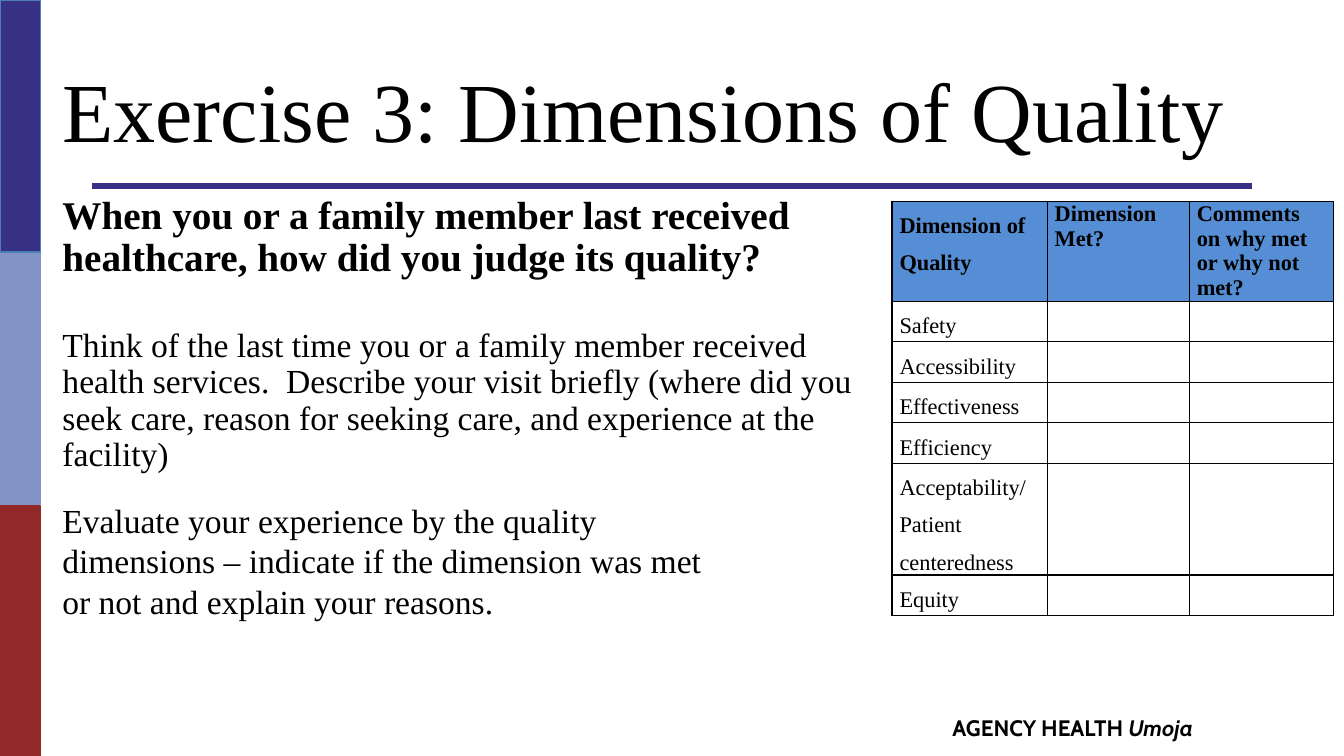
import pptx
import pptx.dml.color
import pptx.enum.shapes
import pptx.enum.text
import pptx.oxml
import pptx.util
from pptx.dml.color import RGBColor
from pptx.util import Cm

BLACK = RGBColor(0, 0, 0)
INDIGO = RGBColor(0x37, 0x31, 0x85)
INDIGO_EDGE = RGBColor(0x4E, 0x7F, 0xB4)
PERIWINKLE = RGBColor(0x83, 0x93, 0xC5)
BRICK = RGBColor(0x93, 0x28, 0x28)
RULE = RGBColor(0x38, 0x30, 0x87)
HEADER_BLUE = RGBColor(0x55, 0x8E, 0xD5)

QUESTION = ("When you or a family member last received healthcare, "
            "how did you judge its quality?")
VISIT = ("Think of the last time you or a family member received health services.  "
         "Describe your visit briefly (where did you seek care, reason for seeking "
         "care, and experience at the facility)")
EVALUATE = ("Evaluate your experience by the quality dimensions – indicate if the "
            "dimension was met or not and explain your reasons.")
HEADERS = ["Dimension of Quality", "Dimension Met?", "Comments on why met or why not met?"]
DIMENSIONS = ["Safety", "Accessibility", "Effectiveness", "Efficiency",
              "Acceptability/Patient centeredness", "Equity"]


def set_attributes(obj, values):
    for name, value in values.items():
        setattr(obj, name, value)


def add_xml(parent, tag, inner="", attributes=""):
    """Append a DrawingML element to parent."""
    ns = 'xmlns:a="http://schemas.openxmlformats.org/drawingml/2006/main"'
    parent.append(pptx.oxml.parse_xml(f"<a:{tag} {ns} {attributes}>{inner}</a:{tag}>"))


class QualitySlide:
    """Holds the presentation, its text style and the current slide."""

    font = "Times New Roman"

    def __init__(self):
        self.prs = pptx.Presentation()
        set_attributes(self.prs, {"slide_width": Cm(33.87), "slide_height": Cm(19.05)})
        self.s = self.prs.slides.add_slide(self.prs.slide_layouts[1])

    def run(self, p, text, size, bold=False, italic=False, name=None):
        r = p.add_run()
        r.text = text
        set_attributes(r.font, {"name": name or self.font, "size": pptx.util.Pt(size),
                                "bold": bold, "italic": italic})
        r.font.color.rgb = BLACK

    def paragraph(self, p, spacing=1.0, before=0):
        p_pr = p._p.get_or_add_pPr()
        p_pr.set("marL", "0")
        p_pr.set("indent", "0")
        add_xml(p_pr, "buNone")
        set_attributes(p, {"line_spacing": spacing, "space_before": pptx.util.Pt(before),
                           "alignment": pptx.enum.text.PP_ALIGN.LEFT})

    def frame(self, shape, box, anchor=pptx.enum.text.MSO_ANCHOR.TOP):
        """Place a text shape and return its frame."""
        set_attributes(shape, dict(zip(("left", "top", "width", "height"), map(Cm, box))))
        tf = shape.text_frame
        set_attributes(tf, {"word_wrap": True, "vertical_anchor": anchor,
                            "auto_size": pptx.enum.text.MSO_AUTO_SIZE.NONE})
        return tf

    def title(self, text, box):
        tf = self.frame(self.s.shapes.title, box, pptx.enum.text.MSO_ANCHOR.MIDDLE)
        p = tf.paragraphs[0]
        self.paragraph(p, 0.9)
        self.run(p, text, 60)

    def body(self, items, box):
        tf = self.frame(self.s.placeholders[1], box)
        for i, (text, size, bold, before) in enumerate(items):
            p = tf.add_paragraph() if i else tf.paragraphs[0]
            self.paragraph(p, 0.9, before)
            self.run(p, text, size, bold)

    def text(self, runs, box):
        tf = self.frame(self.s.shapes.add_textbox(0, 0, 0, 0), box)
        p = tf.paragraphs[0]
        self.paragraph(p)
        for values in runs:
            self.run(p, **values)

    def bar(self, top, height, fill, edge):
        sp = self.s.shapes.add_shape(pptx.enum.shapes.MSO_SHAPE.RECTANGLE,
                                     0, Cm(top), Cm(1.02), Cm(height))
        sp.shadow.inherit = False
        sp.fill.solid()
        sp.fill.fore_color.rgb = fill
        sp.line.color.rgb = edge
        sp.line.width = pptx.util.Pt(1)

    def rule(self, left, right, y):
        line = self.s.shapes.add_connector(pptx.enum.shapes.MSO_CONNECTOR.STRAIGHT,
                                           Cm(left), Cm(y), Cm(right), Cm(y))
        line.line.color.rgb = RULE
        line.line.width = pptx.util.Pt(4.5)
        add_xml(line._element.spPr, "effectLst")

    def cell(self, cell, text, header, spacing):
        set_attributes(cell, {"margin_left": Cm(0.19), "margin_right": Cm(0.19),
                              "margin_top": 0, "margin_bottom": 0})
        for side in ("lnL", "lnR", "lnT", "lnB"):
            add_xml(cell._tc.get_or_add_tcPr(), side,
                    f'<a:solidFill><a:srgbClr val="{BLACK}"/></a:solidFill>', 'w="12700"')
        if header:
            cell.fill.solid()
            cell.fill.fore_color.rgb = HEADER_BLUE
        else:
            cell.fill.background()
        if text:
            p = cell.text_frame.paragraphs[0]
            p.line_spacing = spacing
            self.run(p, text, 16, header)

    def table(self, rows, left, top, widths, heights):
        table = self.s.shapes.add_table(len(rows), len(widths), Cm(left), Cm(top),
                                        Cm(sum(widths)), Cm(sum(heights))).table
        set_attributes(table, {"first_row": False, "horz_banding": False})
        for column, width in zip(table.columns, widths):
            column.width = Cm(width)
        for i, (row, height) in enumerate(zip(rows, heights)):
            table.rows[i].height = Cm(height)
            for j, text in enumerate(row):
                self.cell(table.cell(i, j), text, i == 0, 1.0 if j else 1.5)


def main():
    slide = QualitySlide()
    slide.bar(6.35, 6.35, PERIWINKLE, PERIWINKLE)
    slide.bar(12.75, 6.3, BRICK, BRICK)
    slide.bar(0, 6.35, INDIGO, INDIGO_EDGE)
    slide.rule(2.32, 31.55, 4.68)
    slide.title("Exercise 3: Dimensions of Quality", (1.32, 2.03, 32.8, 1.75))
    slide.body([(QUESTION, 28, True, 0), (VISIT, 24, False, 34.5)],
               (1.32, 4.8, 21.16, 8.61))
    slide.table([HEADERS] + [[name, "", ""] for name in DIMENSIONS], 22.48, 5.07,
                [3.91, 3.58, 3.64], [2.52] + [1.02] * 4 + [2.82, 1.02])
    slide.text([{"text": EVALUATE, "size": 24}], (1.32, 12.47, 17.4, 6.73))
    footer = {"size": 16, "bold": True, "name": "Cabin"}
    slide.text([{"text": "AGENCY HEALTH ", **footer},
                {"text": "Umoja", "italic": True, **footer}], (23.75, 17.88, 9.73, 0.91))
    slide.prs.save("out.pptx")


if __name__ == "__main__":
    main()
